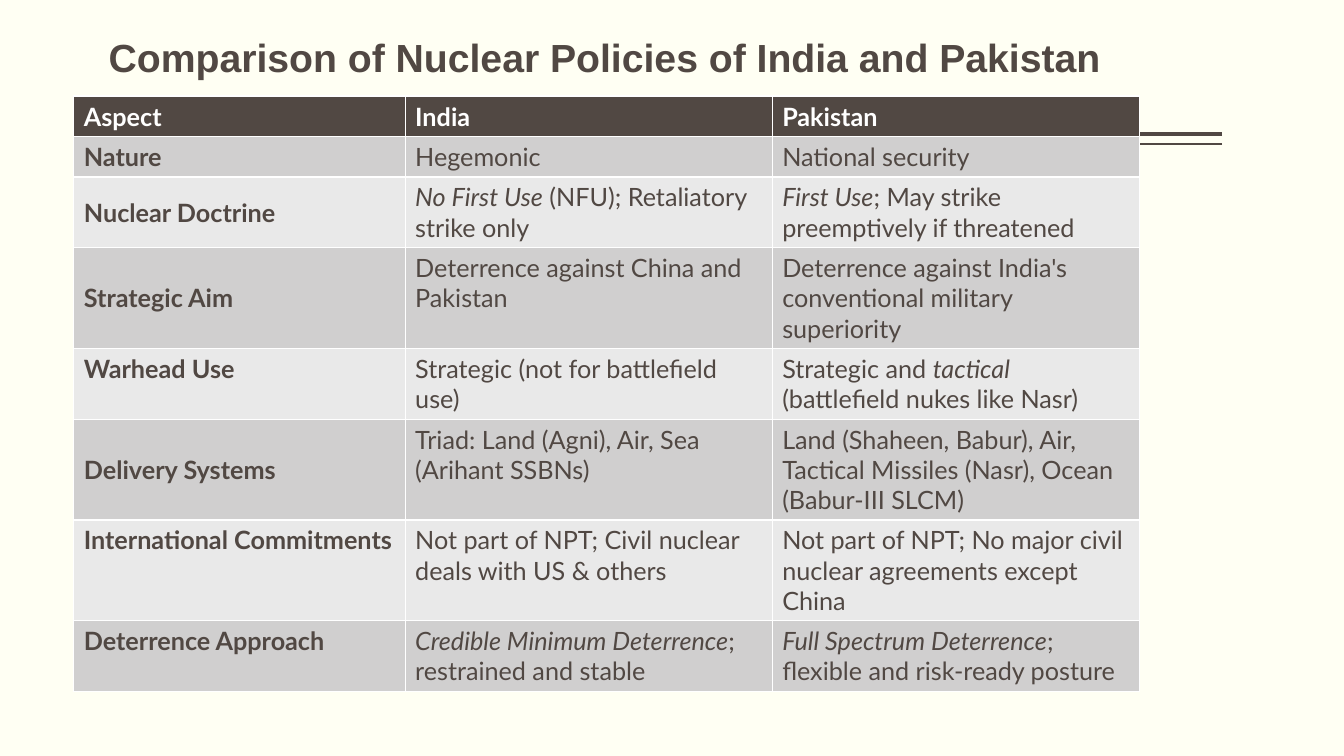
from lxml.etree import SubElement
from pptx import Presentation
from pptx.dml.color import RGBColor
from pptx.enum.shapes import MSO_CONNECTOR
from pptx.enum.text import MSO_ANCHOR
from pptx.oxml.ns import qn
from pptx.util import Cm, Pt

DARK = "514843"
WHITE = "FFFFFF"
BANDS = ["E9E9E9", "D0CFCF"]


def color(hex_code):
    return RGBColor.from_string(hex_code)


def add_span(para, text, font, size, hex_code, bold=False, italic=False):
    span = para.add_run()
    span.text = text
    span.font.name = font
    span.font.size = Pt(size)
    span.font.bold = bold
    span.font.italic = italic
    span.font.color.rgb = color(hex_code)


deck = Presentation()
deck.slide_width = Cm(33.87)
deck.slide_height = Cm(19.05)
page = deck.slides.add_slide(deck.slide_layouts[6])
page.background.fill.solid()
page.background.fill.fore_color.rgb = color("FFFFF3")

for top, width in [(3.38, 3), (3.63, 1)]:
    rule = page.shapes.add_connector(
        MSO_CONNECTOR.STRAIGHT, Cm(30.8), Cm(top), Cm(3.07), Cm(top))
    rule.line.color.rgb = color(DARK)
    rule.line.width = Pt(width)
    SubElement(rule._element.spPr, qn("a:effectLst"))

# Each cell is a list of (text, italic) spans.
rows = [
    (1, [[("Aspect", False)], [("India", False)], [("Pakistan", False)]]),
    (1, [[("Nature", False)], [("Hegemonic", False)], [("National security", False)]]),
    (2, [[("Nuclear Doctrine", False)],
         [("No First Use", True), (" (NFU); Retaliatory strike only", False)],
         [("First Use", True), ("; May strike preemptively if threatened", False)]]),
    (3, [[("Strategic Aim", False)],
         [("Deterrence against China and Pakistan", False)],
         [("Deterrence against India's conventional military superiority", False)]]),
    (2, [[("Warhead Use", False)],
         [("Strategic (not for battlefield use)", False)],
         [("Strategic and ", False), ("tactical", True),
          (" (battlefield nukes like Nasr)", False)]]),
    (3, [[("Delivery Systems", False)],
         [("Triad: Land (Agni), Air, Sea (Arihant SSBNs)", False)],
         [("Land (Shaheen, Babur), Air, Tactical Missiles (Nasr), "
           "Ocean (Babur-III SLCM)", False)]]),
    (3, [[("International Commitments", False)],
         [("Not part of NPT; Civil nuclear deals with US & others", False)],
         [("Not part of NPT; No major civil nuclear agreements except China", False)]]),
    (2, [[("Deterrence Approach", False)],
         [("Credible Minimum Deterrence", True), ("; restrained and stable", False)],
         [("Full Spectrum Deterrence", True),
          ("; flexible and risk-ready posture", False)]]),
]
middle_cells = [(0, 0), (0, 1), (0, 2), (2, 0), (2, 1), (3, 0), (5, 0)]

heights = [Cm(0.26 + 0.76 * lines) for lines, cells in rows]
table = page.shapes.add_table(
    len(rows), 3, Cm(1.86), Cm(2.42), Cm(26.85), sum(heights)).table
for column, width in zip(table.columns, [8.35, 9.25, 9.25]):
    column.width = Cm(width)

for row, (lines, cells) in enumerate(rows):
    table.rows[row].height = heights[row]
    for column, spans in enumerate(cells):
        cell = table.cell(row, column)
        cell.fill.solid()
        cell.fill.fore_color.rgb = color(DARK if row == 0 else BANDS[row % 2])
        if (row, column) in middle_cells:
            cell.vertical_anchor = MSO_ANCHOR.MIDDLE
        for text, italic in spans:
            add_span(cell.text_frame.paragraphs[0], text, "Lato", 18,
                     WHITE if row == 0 else DARK,
                     bold=row == 0 or column == 0, italic=italic)

box = page.shapes.add_textbox(Cm(2.74), Cm(-0.89), Cm(27.74), Cm(3.05))
frame = box.text_frame
frame.word_wrap = True
frame.vertical_anchor = MSO_ANCHOR.BOTTOM
frame.margin_left = frame.margin_right = 0
para = frame.paragraphs[0]
para.line_spacing = 0.9
add_span(para, "Comparison of Nuclear Policies of India and Pakistan",
         "Arial", 28, DARK, bold=True)

deck.save("out.pptx")
